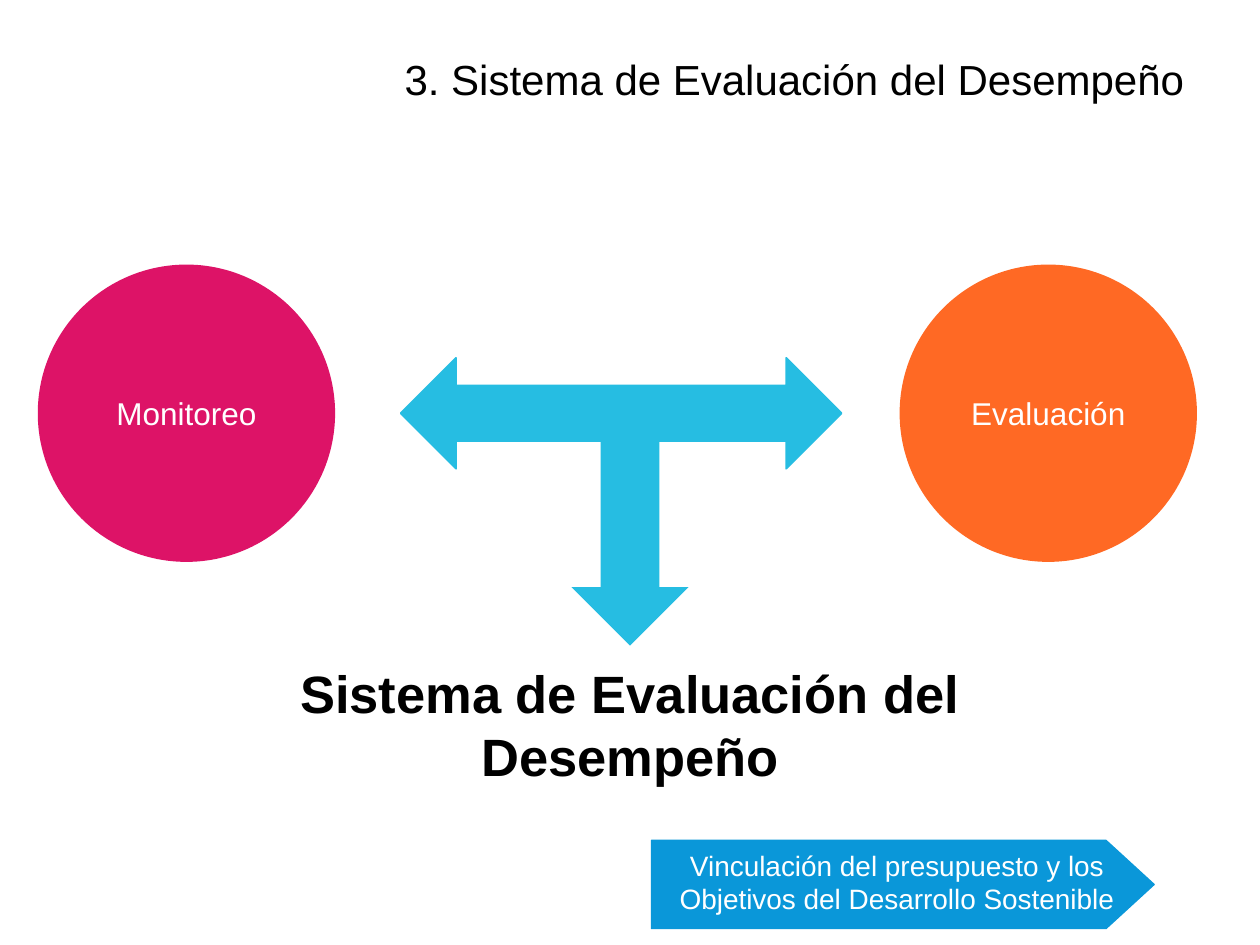
"""Build the slide on monitoring and evaluation within the performance system."""
from dataclasses import dataclass
from typing import Optional

from pptx import Presentation
from pptx.dml.color import RGBColor
from pptx.enum.shapes import MSO_SHAPE
from pptx.enum.text import MSO_ANCHOR, MSO_AUTO_SIZE, PP_ALIGN
from pptx.util import Inches, Pt

ELLIPSE = MSO_SHAPE.OVAL
PENTAGON = MSO_SHAPE.PENTAGON
RIGHT_ARROW = MSO_SHAPE.RIGHT_ARROW
DOUBLE_ARROW = MSO_SHAPE.LEFT_RIGHT_ARROW
TOP, MIDDLE = MSO_ANCHOR.TOP, MSO_ANCHOR.MIDDLE
CENTER, RIGHT = PP_ALIGN.CENTER, PP_ALIGN.RIGHT
NO_FIT = MSO_AUTO_SIZE.NONE
TITLE_ONLY = 5
COLUMNS, ROWS = 100, 75
WIDTH, HEIGHT = Inches(10), Inches(7.5)
FONT = "Arial"
COLORS = {
    "black": "000000",
    "white": "FFFFFF",
    "banner": "0A97D9",
    "monitoring": "DD1367",
    "evaluation": "FF6924",
    "arrow": "26BDE2",
}


@dataclass
class Area:
    """A rectangle in columns and rows of the slide grid."""
    column: float
    row: float
    columns: float
    rows: float

    def lengths(self) -> tuple:
        """Return left, top, width and height as slide lengths."""
        across, down = WIDTH / COLUMNS, HEIGHT / ROWS
        return (round(self.column * across), round(self.row * down),
                round(self.columns * across), round(self.rows * down))


@dataclass
class Figure:
    """A filled preset shape with an optional outline and label."""
    kind: int
    area: Area
    color: str
    line_width: float = 0
    rotation: float = 0
    point: Optional[float] = None
    text: str = ""
    size: float = 18
    margins: tuple = (0.1, 0.05, 0.1, 0.05)


BANNER = Figure(PENTAGON, Area(51.7, 66.7, 39.9, 7), "banner", line_width=0.75,
                point=0.545, size=16, margins=(0.1, 0.12, 0, 0.16),
                text="Vinculación del presupuesto y los Objetivos del Desarrollo Sostenible")
CIRCLES = [
    Figure(ELLIPSE, Area(column, 21, 23.6, 23.6), color, text=text)
    for column, color, text in ((3, "monitoring", "Monitoreo"),
                                (71.4, "evaluation", "Evaluación"))
]
ARROWS = [
    Figure(RIGHT_ARROW, Area(41.7, 38.3, 16.6, 9.3), "arrow", rotation=90),
    Figure(DOUBLE_ARROW, Area(31.8, 28.4, 35, 8.8), "arrow", line_width=1),
]


def rgb(name: str) -> RGBColor:
    """Look up a named colour."""
    return RGBColor.from_string(COLORS[name])


def write(shape, text: str, size: float, color: str, align=CENTER, anchor=MIDDLE,
          bold: bool = False, margins: tuple = (0.1, 0.05, 0.1, 0.05)) -> None:
    """Fill a shape with one formatted paragraph."""
    frame = shape.text_frame
    frame.text = text
    frame.word_wrap = True
    frame.auto_size = NO_FIT
    frame.vertical_anchor = anchor
    (frame.margin_left, frame.margin_top,
     frame.margin_right, frame.margin_bottom) = map(Inches, margins)
    para = frame.paragraphs[0]
    para.alignment = align
    font = para.runs[0].font
    font.name, font.size, font.bold = FONT, Pt(size), bold
    font.color.rgb = rgb(color)


def draw_figure(page, figure: Figure) -> None:
    """Add a preset shape to the page."""
    shape = page.shapes.add_shape(figure.kind, *figure.area.lengths())
    shape.shadow.inherit = False
    shape.rotation = figure.rotation
    shape.fill.solid()
    shape.fill.fore_color.rgb = rgb(figure.color)
    if figure.line_width:
        shape.line.color.rgb = rgb(figure.color)
        shape.line.width = Pt(figure.line_width)
    else:
        shape.line.fill.background()
    if figure.point is not None:
        shape.adjustments[0] = figure.point
    if figure.text:
        write(shape, figure.text, figure.size, "white", margins=figure.margins)


def draw_title(page) -> None:
    """Place and format the title placeholder."""
    title = page.shapes.title
    title.left, title.top, title.width, title.height = Area(5, 3, 90, 7).lengths()
    write(title, "3. Sistema de Evaluación del Desempeño", 24, "black", align=RIGHT)
    title.text_frame.paragraphs[0].line_spacing = 0.9


def draw_conclusion(page) -> None:
    """Add the bold text below the arrows."""
    box = page.shapes.add_textbox(*Area(21.6, 52, 56.8, 11.1).lengths())
    write(box, "Sistema de Evaluación del Desempeño", 30, "black", anchor=TOP, bold=True)


def main() -> None:
    """Build and save the deck."""
    deck = Presentation()
    deck.slide_width, deck.slide_height = WIDTH, HEIGHT
    page = deck.slides.add_slide(deck.slide_layouts[TITLE_ONLY])
    draw_title(page)
    for figure in (BANNER, *CIRCLES):
        draw_figure(page, figure)
    draw_conclusion(page)
    for figure in ARROWS:
        draw_figure(page, figure)
    deck.save("out.pptx")


if __name__ == "__main__":
    main()
